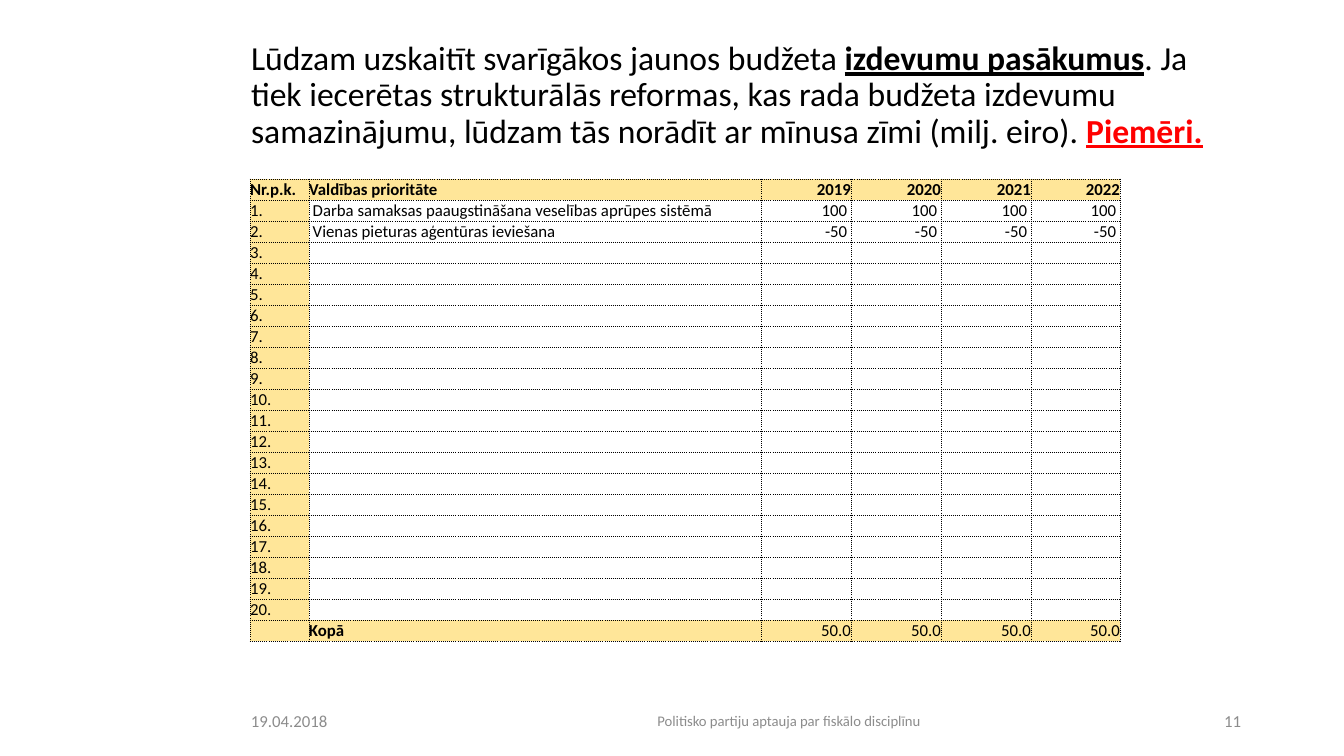
from lxml.etree import SubElement
from pptx import Presentation
from pptx.dml.color import RGBColor
from pptx.enum.text import MSO_ANCHOR as Anchor, PP_ALIGN as Align
from pptx.oxml.ns import qn
from pptx.util import Pt

EMU_PER_PX = 914400 / 100.8
FONT = "Calibri"
BLACK, RED, GREY, SAND = "000000", "FF0000", "8C8C8C", "FFE699"

TITLE_BOX = (241, 40, 1010, 112)
TITLE = [  # text, emphasised, colour
    ("Lūdzam uzskaitīt svarīgākos jaunos budžeta ", False, BLACK),
    ("izdevumu pasākumus", True, BLACK),
    (". Ja tiek iecerētas strukturālās reformas, kas rada budžeta izdevumu "
     "samazinājumu, lūdzam tās norādīt ar mīnusa zīmi (milj. eiro). ", False, BLACK),
    ("Piemēri.", True, RED),
]

HEADER = ["Nr.p.k.", "Valdības prioritāte", "2019", "2020", "2021", "2022"]
MEASURES = [
    [" Darba samaksas paaugstināšana veselības aprūpes sistēmā"] + ["100 "] * 4,
    [" Vienas pieturas aģentūras ieviešana"] + ["-50 "] * 4,
]
TOTAL = ["", "Kopā"] + ["50.0"] * 4
MEASURE_COUNT = 20
TABLE_LEFT, TABLE_TOP, ROW_HEIGHT = 250, 179, 21
COLUMN_WIDTHS = [59, 452, 90, 90, 90, 89]
TABLE_SIZE = 12

FOOTER_TOP, FOOTER_HEIGHT = 701, 40
FOOTERS = [  # left, width, text, size, alignment
    (241, 165, "19.04.2018", 12, Align.LEFT),
    (434, 710, "Politisko partiju aptauja par fiskālo disciplīnu", 10.5, Align.CENTER),
    (1171, 80, "11", 12, Align.RIGHT),
]


def px(length):
    return round(length * EMU_PER_PX)


def color(hex_code):
    return RGBColor.from_string(hex_code)


def set_font(font, size, hex_code, bold=False):
    font.name, font.size, font.bold = FONT, Pt(size), bold
    font.color.rgb = color(hex_code)


def add_dotted_borders(cell):
    properties = cell._tc.get_or_add_tcPr()
    for side in ("lnL", "lnR", "lnT", "lnB"):
        line = SubElement(properties, qn(f"a:{side}"), w=str(Pt(0.5)))
        fill = SubElement(line, qn("a:solidFill"))
        SubElement(fill, qn("a:srgbClr"), val=BLACK)
        SubElement(line, qn("a:prstDash"), val="dot")


def fill_cell(cell, text, filled, bold, align, anchor):
    cell.margin_left = cell.margin_right = cell.margin_top = cell.margin_bottom = 0
    cell.vertical_anchor = anchor
    add_dotted_borders(cell)
    if filled:
        cell.fill.solid()
        cell.fill.fore_color.rgb = color(SAND)
    else:
        cell.fill.background()
    para = cell.text_frame.paragraphs[0]
    para.alignment = align
    set_font(para.font, TABLE_SIZE, BLACK, bold)
    if text:
        para.add_run().text = text
    else:  # keeps an empty row from growing
        SubElement(para._p, qn("a:endParaRPr"), sz=str(TABLE_SIZE * 100))


def add_title(slide):
    title = slide.shapes.title
    title.left, title.top, title.width, title.height = map(px, TITLE_BOX)
    title.text_frame.vertical_anchor = Anchor.MIDDLE
    title.text_frame.word_wrap = True
    para = title.text_frame.paragraphs[0]
    para.alignment, para.line_spacing = Align.LEFT, 0.9
    for text, emphasised, hex_code in TITLE:
        span = para.add_run()
        span.text = text
        set_font(span.font, 24, hex_code, emphasised)
        span.font.underline = emphasised


def add_budget_table(slide):
    rows = [HEADER]
    for number in range(1, MEASURE_COUNT + 1):
        values = MEASURES[number - 1] if number <= len(MEASURES) else [""] * 5
        rows.append([f"{number}."] + values)
    rows.append(TOTAL)
    last = len(rows) - 1

    table = slide.shapes.add_table(
        len(rows), len(HEADER), px(TABLE_LEFT), px(TABLE_TOP),
        px(sum(COLUMN_WIDTHS)), px(ROW_HEIGHT * len(rows))).table
    table.first_row = table.horz_banding = False
    for column, width in zip(table.columns, COLUMN_WIDTHS):
        column.width = px(width)
    for r, values in enumerate(rows):
        table.rows[r].height = px(ROW_HEIGHT)
        for c, text in enumerate(values):
            fill_cell(
                table.cell(r, c), text,
                filled=r in (0, last) or c == 0,
                bold=r == 0 or (r == last and c == 1),
                align=Align.RIGHT if c >= 2 else Align.LEFT,
                anchor=Anchor.BOTTOM if r == 0 else Anchor.MIDDLE)


def add_footers(slide):
    for left, width, text, size, align in FOOTERS:
        box = slide.shapes.add_textbox(
            px(left), px(FOOTER_TOP), px(width), px(FOOTER_HEIGHT))
        frame = box.text_frame
        frame.word_wrap, frame.vertical_anchor = True, Anchor.MIDDLE
        para = frame.paragraphs[0]
        para.alignment = align
        set_font(para.font, size, GREY)
        para.add_run().text = text


def main():
    deck = Presentation()
    deck.slide_width, deck.slide_height = px(1344), px(756)
    slide = deck.slides.add_slide(deck.slide_layouts[5])
    add_title(slide)
    add_budget_table(slide)
    add_footers(slide)
    deck.save("out.pptx")


if __name__ == "__main__":
    main()
